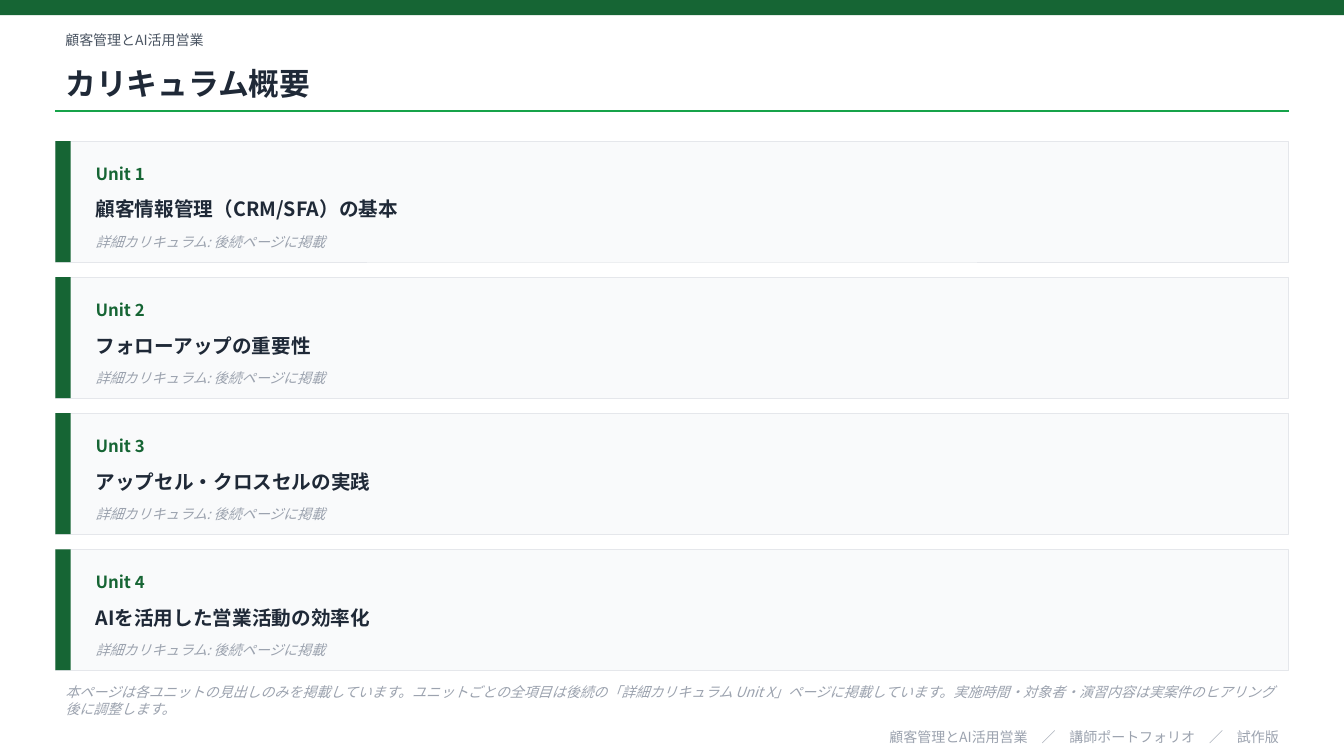
from lxml import etree
from pptx import Presentation
from pptx.dml.color import RGBColor
from pptx.enum.shapes import MSO_CONNECTOR, MSO_SHAPE
from pptx.enum.text import MSO_ANCHOR, PP_ALIGN
from pptx.oxml.ns import qn
from pptx.util import Emu, Pt

RECTANGLE = MSO_SHAPE.RECTANGLE
STRAIGHT = MSO_CONNECTOR.STRAIGHT
MIDDLE = MSO_ANCHOR.MIDDLE
LEFT, RIGHT = PP_ALIGN.LEFT, PP_ALIGN.RIGHT

EMU_PER_PX = 9144
SLIDE_WIDTH, SLIDE_HEIGHT = 1333, 750
MARGIN, CONTENT_WIDTH = 55, 1223
CARD_TOP, CARD_HEIGHT, CARD_PITCH = 140, 120, 135
BAR_WIDTH = 15
CARD_TEXT_LEFT, CARD_TEXT_WIDTH = 85, 1173

FONT = "Noto Sans CJK JP"
GREEN, BRIGHT_GREEN = "166534", "16A34A"
INK, SLATE, MUTED = "1F2937", "4B5563", "9CA3AF"
CARD_FILL, CARD_BORDER = "F9FAFB", "E5E7EB"

COURSE = "顧客管理とAI活用営業"
UNITS = [
    "顧客情報管理（CRM/SFA）の基本",
    "フォローアップの重要性",
    "アップセル・クロスセルの実践",
    "AIを活用した営業活動の効率化",
]
UNIT_NOTE = "詳細カリキュラム: 後続ページに掲載"
PAGE_NOTE = (
    "本ページは各ユニットの見出しのみを掲載しています。"
    "ユニットごとの全項目は後続の「詳細カリキュラム Unit X」ページに掲載しています。"
    "実施時間・対象者・演習内容は実案件のヒアリング後に調整します。"
)
FOOTER = "　／　".join([COURSE, "講師ポートフォリオ", "試作版"])


def px(*lengths):
    return [Emu(length * EMU_PER_PX) for length in lengths]


def color(value):
    return RGBColor.from_string(value)


class SlideBuilder:
    """Draws styled elements on the current slide."""

    def __init__(self, slide, font_name):
        self.slide = slide
        self.font_name = font_name

    def rectangle(self, left, top, width, height, fill, border=None):
        shape = self.slide.shapes.add_shape(RECTANGLE, *px(left, top, width, height))
        shape.shadow.inherit = False
        shape.fill.solid()
        shape.fill.fore_color.rgb = color(fill)
        if border:
            shape.line.color.rgb = color(border)
            shape.line.width = Pt(0.5)
        else:
            shape.line.fill.background()

    def rule(self, left, top, width, stroke):
        connector = self.slide.shapes.add_connector(
            STRAIGHT, *px(left, top, left + width, top))
        connector.line.color.rgb = color(stroke)
        connector.line.width = Pt(1)
        properties = connector._element.spPr
        etree.SubElement(properties, qn("a:effectLst"))

    def text(self, left, top, width, height, content, size, ink,
             align=LEFT, **formats):
        box = self.slide.shapes.add_textbox(*px(left, top, width, height))
        frame = box.text_frame
        frame.word_wrap = True
        frame.vertical_anchor = MIDDLE
        paragraph = frame.paragraphs[0]
        paragraph.alignment = align
        run = paragraph.add_run()
        run.text = content
        run.font.color.rgb = color(ink)
        values = {"name": self.font_name, "size": Pt(size), **formats}
        for attribute, value in values.items():
            setattr(run.font, attribute, value)
        east_asian = etree.SubElement(run._r.get_or_add_rPr(), qn("a:ea"))
        east_asian.set("typeface", self.font_name)

    def unit_card(self, top, number, title):
        self.rectangle(MARGIN, top, CONTENT_WIDTH, CARD_HEIGHT, CARD_FILL, CARD_BORDER)
        self.rectangle(MARGIN, top, BAR_WIDTH, CARD_HEIGHT, GREEN)
        self.text(CARD_TEXT_LEFT, top + 12, 150, 40, f"Unit {number}", 12, GREEN, bold=True)
        self.text(CARD_TEXT_LEFT, top + 45, CARD_TEXT_WIDTH, 45, title, 14, INK, bold=True)
        self.text(CARD_TEXT_LEFT, top + 85, CARD_TEXT_WIDTH, 30, UNIT_NOTE, 10, MUTED,
                  italic=True)


def main():
    presentation = Presentation()
    presentation.slide_width, presentation.slide_height = px(SLIDE_WIDTH, SLIDE_HEIGHT)
    slide = presentation.slides.add_slide(presentation.slide_layouts[6])
    builder = SlideBuilder(slide, FONT)

    builder.rectangle(0, 0, SLIDE_WIDTH, 15, GREEN)
    builder.text(MARGIN, 25, CONTENT_WIDTH, 30, COURSE, 10, SLATE)
    builder.text(MARGIN, 55, CONTENT_WIDTH, 55, "カリキュラム概要", 22, INK, bold=True)
    builder.rule(MARGIN, 110, CONTENT_WIDTH, BRIGHT_GREEN)

    for index, title in enumerate(UNITS):
        builder.unit_card(CARD_TOP + index * CARD_PITCH, index + 1, title)

    builder.text(MARGIN, 675, CONTENT_WIDTH, 40, PAGE_NOTE, 10, MUTED, italic=True)
    builder.text(MARGIN, 720, CONTENT_WIDTH, 22, FOOTER, 10, MUTED, align=RIGHT)
    presentation.save("out.pptx")


if __name__ == "__main__":
    main()
